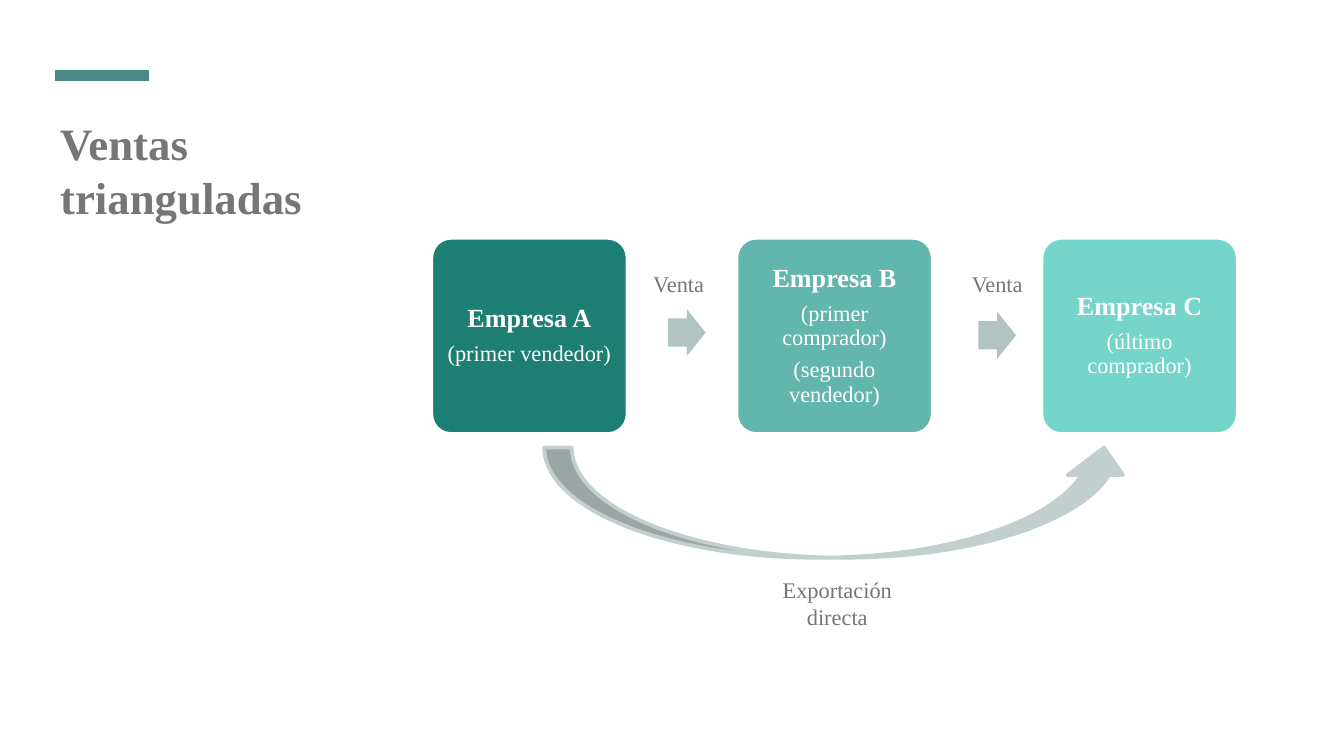
from pptx import Presentation
from pptx import util as u
from pptx.dml.color import RGBColor
from pptx.enum import shapes, text
from pptx.oxml.ns import qn
from lxml import etree

WIDE = 10
HIGH = WIDE * 9 / 16
FACE = "Times New Roman"
GRAY = "777676"
# Grid of company boxes: first left edge, step, top, side
LEFT, STEP, TOP, SIDE = 3.21, 2.27, 1.77, 1.46
FIRMS = [
    ("1D7E74", "Empresa A", ["(primer vendedor)"]),
    ("62B6AE", "Empresa B", ["(primer comprador)", "(segundo vendedor)"]),
    ("75D5CB", "Empresa C", ["(último comprador)"]),
]


def tint(code):
    return RGBColor.from_string(code)


def inch(*vals):
    return [u.Inches(v) for v in vals]


def style(para, size, color, bold=False):
    font = para.font
    font.name, font.size, font.bold = FACE, u.Pt(size), bold
    font.color.rgb = tint(color)


def inset(frame, size):
    frame.word_wrap = True
    frame.margin_left = frame.margin_right = u.Inches(size)
    frame.margin_top = frame.margin_bottom = u.Inches(size)


def solid(slide, kind, box, fill, edge=None):
    item = slide.shapes.add_shape(kind, *inch(*box))
    item.shadow.inherit = False
    item.fill.solid()
    item.fill.fore_color.rgb = tint(fill)
    if edge:
        item.line.color.rgb = tint(edge)
        item.line.width = u.Pt(2)
    else:
        item.line.fill.background()
    return item


def label(slide, box, words, size=12, bold=False, align=text.PP_ALIGN.CENTER):
    frame = slide.shapes.add_textbox(*inch(*box)).text_frame
    frame.word_wrap = True
    para = frame.paragraphs[0]
    para.text, para.alignment = words, align
    style(para, size, GRAY, bold)
    return frame


def bar(slide, start, end, y):
    line = slide.shapes.add_connector(
        shapes.MSO_CONNECTOR.STRAIGHT, *inch(start, y, end, y))
    line.line.color.rgb = tint("4A8A84")
    line.line.width = u.Pt(6)
    etree.SubElement(line._element.spPr, qn("a:effectLst"))


def firm(slide, col, fill, name, roles):
    item = solid(slide, shapes.MSO_SHAPE.ROUNDED_RECTANGLE,
                 (LEFT + col * STEP, TOP, SIDE, SIDE), fill, "FFFFFF")
    item.adjustments[0] = 0.1
    frame = item.text_frame
    inset(frame, 0.06)
    frame.vertical_anchor = text.MSO_ANCHOR.MIDDLE
    for row, words in enumerate([name] + roles):
        para = frame.add_paragraph() if row else frame.paragraphs[0]
        size = 12 if row else 14
        para.text, para.alignment = words, text.PP_ALIGN.CENTER
        para.line_spacing, para.space_after = 0.9, u.Pt(0.35 * size)
        style(para, size, "FFFFFF", bold=not row)


def sale(slide, x, y, mid):
    arrow = solid(slide, shapes.MSO_SHAPE.RIGHT_ARROW, (x, y, 0.28, 0.35), "B2C4C2")
    arrow.adjustments[0] = 0.6
    arrow.adjustments[1] = 0.5
    label(slide, (mid - 0.59, 1.96, 1.18, 0.3), "Venta")


def main():
    deck = Presentation()
    deck.slide_width, deck.slide_height = inch(WIDE, HIGH)
    slide = deck.slides.add_slide(deck.slide_layouts[6])

    # Heading
    bar(slide, 0.41, 1.11, HIGH / 10)
    head = label(slide, (0.35, 0.76, 2.34, 3.44), "Ventas trianguladas",
                 24, True, text.PP_ALIGN.LEFT)
    inset(head, 0.1)

    # Companies and the sales between them
    for col, (fill, name, roles) in enumerate(FIRMS):
        firm(slide, col, fill, name, roles)
    sale(slide, 4.97, 2.3, 5.05)
    sale(slide, 7.28, 2.32, 7.42)

    # Direct export from first to last
    solid(slide, shapes.MSO_SHAPE.CURVED_UP_ARROW,
          (4.05, 3.33, 4.37, 0.82), "C1CFCE", "C1CFCE")
    label(slide, (5.64, 4.24, 1.18, 0.5), "Exportación directa")

    deck.save("out.pptx")


if __name__ == "__main__":
    main()
